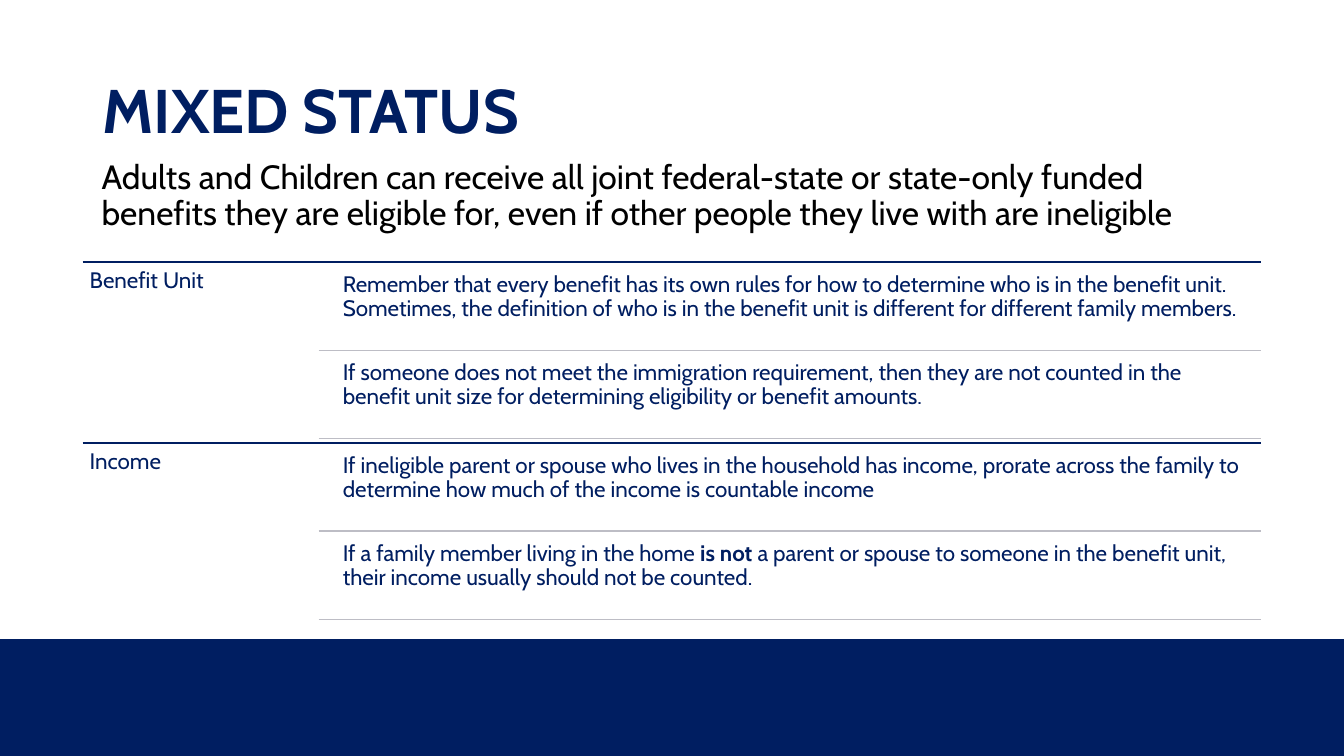
import pptx
import pptx.util
import pptx.dml.color
import pptx.enum.shapes
import pptx.enum.text
import pptx.oxml.ns
from lxml import etree

Inches = pptx.util.Inches
Pt = pptx.util.Pt
ANCHOR = pptx.enum.text.MSO_ANCHOR

COLORS = {"navy": "001E61", "black": "000000", "gray": "BDBDC5"}

LEFT, SPLIT, RIGHT = 0.82, 3.16, 12.51
TOP, PITCH, STEP = 2.6, 1.795, 0.875

# Each section has a label and rows; each row is a list of (text, bold) runs
SECTIONS = [
    ("Benefit Unit", [
        [("Remember that every benefit has its own rules for how to determine "
          "who is in the benefit unit. Sometimes, the definition of who is in "
          "the benefit unit is different for different family members.", False)],
        [("If someone does not meet the immigration requirement, then they are "
          "not counted in the benefit unit size for determining eligibility or "
          "benefit amounts.", False)],
    ]),
    ("Income", [
        [("If ineligible parent or spouse who lives in the household has "
          "income, prorate across the family to determine how much of the "
          "income is countable income", False)],
        [("If a family member living in the home ", False), ("is not ", True),
         ("a parent or spouse to someone in the benefit unit, their income "
          "usually should not be counted.", False)],
    ]),
]


def color(name):
    return pptx.dml.color.RGBColor.from_string(COLORS[name])


def add_text(slide, box, runs, size=16, tint="navy", inset=0.07, anchor=ANCHOR.TOP):
    frame = slide.shapes.add_textbox(*map(Inches, box)).text_frame
    pad = Inches(inset)
    layout = {"word_wrap": True, "vertical_anchor": anchor, "margin_left": pad,
              "margin_right": pad, "margin_top": pad, "margin_bottom": pad}
    for key, value in layout.items():
        setattr(frame, key, value)
    para = frame.paragraphs[0]
    para.line_spacing = 0.9
    for text, bold in runs:
        run = para.add_run()
        run.text = text
        for key, value in {"name": "Cabin", "size": Pt(size), "bold": bold}.items():
            setattr(run.font, key, value)
        run.font.color.rgb = color(tint)


def add_rule(slide, left, top, tint):
    kind = pptx.enum.shapes.MSO_CONNECTOR.STRAIGHT
    rule = slide.shapes.add_connector(
        kind, Inches(left), Inches(top), Inches(RIGHT), Inches(top))
    rule.line.color.rgb = color(tint)
    rule.line.width = Pt(1)
    etree.SubElement(rule._element.spPr, pptx.oxml.ns.qn("a:effectLst"))


def add_band(slide, box):
    kind = pptx.enum.shapes.MSO_SHAPE.RECTANGLE
    band = slide.shapes.add_shape(kind, *map(Inches, box))
    band.shadow.inherit = False
    band.fill.solid()
    band.fill.fore_color.rgb = color("navy")
    band.line.fill.background()


def add_section(slide, top, label, rows):
    add_rule(slide, LEFT, top, "navy")
    add_text(slide, (LEFT, top, SPLIT - LEFT, 1.8), [(label, False)])
    for index, runs in enumerate(rows):
        start = top + 0.04 + index * STEP
        add_text(slide, (3.33, start, 9.17, 0.84), runs)
        add_rule(slide, SPLIT, top + (index + 1) * STEP, "gray")


def main():
    deck = pptx.Presentation()
    deck.slide_width, deck.slide_height = Inches(13.33), Inches(7.5)
    slide = deck.slides.add_slide(deck.slide_layouts[6])

    # Footer band
    add_band(slide, (0, 6.34, 13.33, 1.16))

    # Title and lead
    add_text(slide, (0.92, 0.4, 11.5, 1.45), [("MIXED STATUS", True)],
             size=44, inset=0.1, anchor=ANCHOR.MIDDLE)
    lead = ("Adults and Children can receive all joint federal-state or "
            "state-only funded benefits they are eligible for, even if other "
            "people they live with are ineligible")
    add_text(slide, (0.91, 1.49, 11.5, 1), [(lead, False)],
             size=24, tint="black", inset=0.1)

    # Ruled sections
    for index, (label, rows) in enumerate(SECTIONS):
        add_section(slide, TOP + index * PITCH, label, rows)

    deck.save("out.pptx")


if __name__ == "__main__":
    main()
